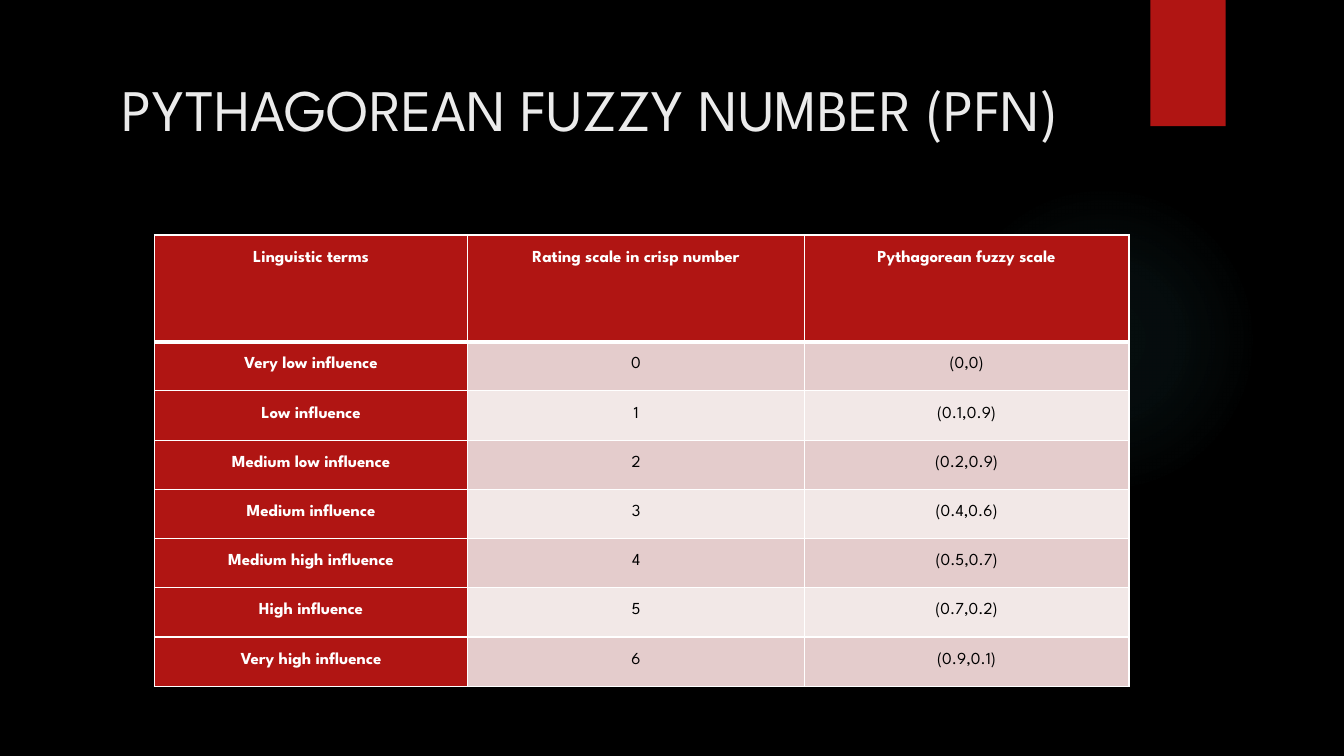
from lxml import etree
from pptx import Presentation
from pptx.dml.color import RGBColor
from pptx.enum.shapes import MSO_SHAPE
from pptx.enum.text import MSO_ANCHOR, PP_ALIGN
from pptx.oxml import parse_xml
from pptx.oxml.ns import qn
from pptx.util import Cm, Pt

TITLE = "PYTHAGOREAN FUZZY NUMBER (PFN)"
HEADER = ("Linguistic terms", "Rating scale in crisp number", "Pythagorean fuzzy scale")
SCALE = [
    ("Very low influence", "0", "(0,0)"),
    ("Low influence", "1", "(0.1,0.9)"),
    ("Medium low influence", "2", "(0.2,0.9)"),
    ("Medium influence", "3", "(0.4,0.6)"),
    ("Medium high influence", "4", "(0.5,0.7)"),
    ("High influence", "5", "(0.7,0.2)"),
    ("Very high influence", "6", "(0.9,0.1)"),
]
FONT = "League Spartan"
COLORS = {
    "background": "000000", "title": "EBEBEB", "red": "B01513", "glow": "50B9C1",
    "band_dark": "E4CCCC", "band_light": "F2E8E7", "white": "FFFFFF", "black": "000000",
}
COLUMN_WIDTHS = (7.9, 8.48, 8.18)
HEADER_HEIGHT, ROW_HEIGHT = 2.69, 1.24
GLOW_STOPS = ((0, 7), (36, 6), (69, 0))  # position and opacity, in percent
A_NS = "http://schemas.openxmlformats.org/drawingml/2006/main"


def rgb(name):
    return RGBColor.from_string(COLORS[name])


def style_text(p, size, color, bold=False):
    p.alignment = PP_ALIGN.CENTER
    for r in p.runs:
        r.font.name = FONT
        r.font.size = Pt(size)
        r.font.bold = bold
        r.font.color.rgb = rgb(color)


def add_plain_shape(slide, kind, left, top, width, height):
    sp = slide.shapes.add_shape(kind, Cm(left), Cm(top), Cm(width), Cm(height))
    sp.shadow.inherit = False
    sp.line.fill.background()
    return sp


def add_glow(slide):
    sp = add_plain_shape(slide, MSO_SHAPE.OVAL, 23.9, 4.65, 7.82, 7.82)
    stops = "".join(
        f'<a:gs pos="{pos * 1000}"><a:srgbClr val="{COLORS["glow"]}">'
        f'<a:alpha val="{alpha * 1000}"/></a:srgbClr></a:gs>'
        for pos, alpha in GLOW_STOPS)
    gradient = parse_xml(
        f'<a:gradFill xmlns:a="{A_NS}" rotWithShape="1"><a:gsLst>{stops}</a:gsLst>'
        '<a:path path="circle"><a:fillToRect l="50000" t="50000" r="50000" b="50000"/>'
        '</a:path></a:gradFill>')
    sp.element.spPr.find(qn("a:prstGeom")).addnext(gradient)


def add_title(slide):
    tf = slide.shapes.add_textbox(Cm(1.8), Cm(1.27), Cm(26.14), Cm(3.89)).text_frame
    tf.word_wrap = True
    tf.vertical_anchor = MSO_ANCHOR.TOP
    tf.margin_top = Cm(0.56)
    tf.text = TITLE
    style_text(tf.paragraphs[0], 42, "title")


def set_borders(cell, widths):
    """Draw white borders; widths maps a side (L, R, T, B) to points."""
    tc_pr = cell._tc.get_or_add_tcPr()
    for i, (side, width) in enumerate(widths.items()):
        line = etree.Element(qn(f"a:ln{side}"), w=str(Pt(width)))
        fill = etree.SubElement(line, qn("a:solidFill"))
        etree.SubElement(fill, qn("a:srgbClr"), val=COLORS["white"])
        tc_pr.insert(i, line)


def add_scale_table(slide):
    rows = [HEADER, *SCALE]
    height = HEADER_HEIGHT + ROW_HEIGHT * len(SCALE)
    table = slide.shapes.add_table(
        len(rows), len(HEADER), Cm(3.89), Cm(5.92), Cm(sum(COLUMN_WIDTHS)), Cm(height)).table
    for column, width in zip(table.columns, COLUMN_WIDTHS):
        column.width = Cm(width)
    for i, row in enumerate(rows):
        table.rows[i].height = Cm(ROW_HEIGHT if i else HEADER_HEIGHT)
        for j, text in enumerate(row):
            cell = table.cell(i, j)
            heading = i == 0 or j == 0
            band = "band_dark" if i % 2 else "band_light"
            cell.fill.solid()
            cell.fill.fore_color.rgb = rgb("red" if heading else band)
            cell.margin_left = cell.margin_right = Cm(0.18)
            cell.margin_top = cell.margin_bottom = 0
            cell.text_frame.text = text
            p = cell.text_frame.paragraphs[0]
            p.line_spacing = 2.0
            style_text(p, 12, "white" if heading else "black", heading)
            set_borders(cell, {"L": 1, "R": 1, "T": 3 if i == 1 else 1, "B": 1 if i else 3})


def main():
    prs = Presentation()
    prs.slide_width, prs.slide_height = Cm(33.87), Cm(19.05)
    slide = prs.slides.add_slide(prs.slide_layouts[6])
    slide.background.fill.solid()
    slide.background.fill.fore_color.rgb = rgb("background")
    add_glow(slide)
    tab = add_plain_shape(slide, MSO_SHAPE.RECTANGLE, 28.99, 0, 1.9, 3.18)
    tab.fill.solid()
    tab.fill.fore_color.rgb = rgb("red")
    add_title(slide)
    add_scale_table(slide)
    prs.save("out.pptx")


if __name__ == "__main__":
    main()
